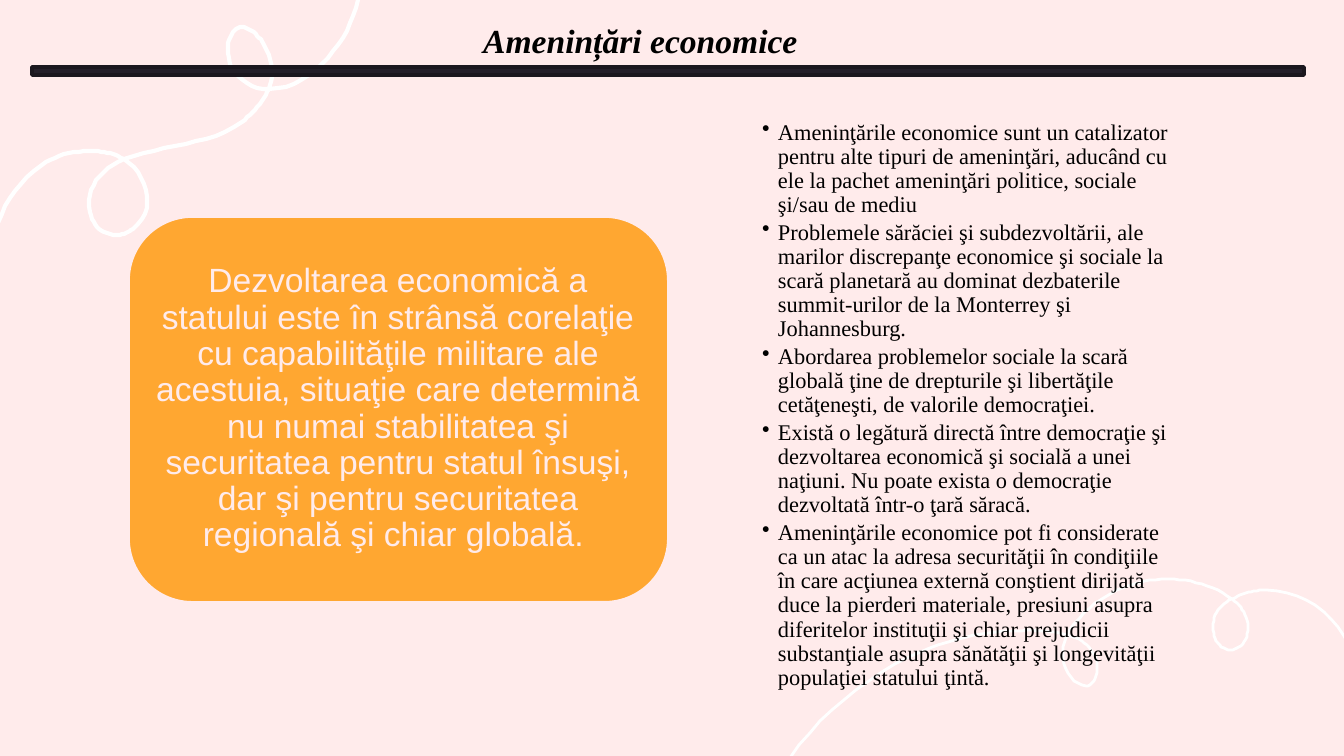
from dataclasses import dataclass

from lxml import etree
from pptx import Presentation
from pptx.dml.color import RGBColor
from pptx.enum.shapes import MSO_SHAPE
from pptx.enum.text import MSO_ANCHOR, PP_ALIGN
from pptx.oxml.ns import qn
from pptx.util import Pt

EMU_PER_PX = 914400 / 134.4
CURVE_STEPS = 12
BLANK_LAYOUT = 6
RECTANGLE, ROUNDED = MSO_SHAPE.RECTANGLE, MSO_SHAPE.ROUNDED_RECTANGLE
TOP, MIDDLE = MSO_ANCHOR.TOP, MSO_ANCHOR.MIDDLE
LEFT, CENTER = PP_ALIGN.LEFT, PP_ALIGN.CENTER


@dataclass(frozen=True)
class Theme:
    background: str = "FFEBEB"
    swirl: str = "FFFFFF"
    bar: str = "241F29"
    bar_edge: str = "1B171E"
    card: str = "FFA731"
    ink: str = "000000"
    serif: str = "Times New Roman"
    sans: str = "Arial"
    large: int = 18
    small: int = 12


THEME = Theme()

TITLE = "Amenințări economice"
STATEMENT = (
    "Dezvoltarea economică a statului este în strânsă corelaţie cu capabilităţile "
    "militare ale acestuia, situaţie care determină nu numai stabilitatea şi "
    "securitatea pentru statul însuşi, dar şi pentru securitatea regională şi "
    "chiar globală. "
)
THREATS = [
    "Ameninţările economice sunt un catalizator pentru alte tipuri de ameninţări, "
    "aducând cu ele la pachet ameninţări politice, sociale şi/sau de mediu",
    "Problemele sărăciei şi subdezvoltării, ale marilor discrepanţe economice şi "
    "sociale la scară planetară au dominat dezbaterile summit-urilor de la "
    "Monterrey şi Johannesburg.",
    "Abordarea problemelor sociale la scară globală ţine de drepturile şi "
    "libertăţile cetăţeneşti, de valorile democraţiei.",
    "Există o legătură directă între democraţie şi dezvoltarea economică şi socială "
    "a unei naţiuni. Nu poate exista o democraţie dezvoltată într-o ţară săracă.",
    "Ameninţările economice pot fi considerate ca un atac la adresa securităţii în "
    "condiţiile în care acţiunea externă conştient dirijată duce la pierderi "
    "materiale, presiuni asupra diferitelor instituţii şi chiar prejudicii "
    "substanţiale asupra sănătăţii şi longevităţii populaţiei statului ţintă.",
]

# Each swirl: a start point, then cubic segments (two controls and an end), in px.
TOP_SWIRL = (353, -66), [
    (364, -34, 362, 1, 347, 31), (332, 58, 304, 89, 269, 89),
    (245, 89, 226, 71, 228, 47), (228, 39, 234, 27, 242, 27),
    (249, 27, 259, 36, 263, 43), (273, 59, 274, 75, 269, 89),
    (263, 102, 253, 113, 242, 122), (212, 145, 161, 145, 124, 159),
    (101, 169, 85, 188, 90, 212), (93, 226, 103, 235, 116, 235),
    (124, 235, 132, 231, 138, 224), (157, 206, 145, 172, 124, 159),
    (113, 153, 101, 151, 89, 151), (69, 151, 48, 157, 34, 171),
    (4, 194, -7, 231, -13, 269),
]
BOTTOM_SWIRL = (781, 771), [
    (815, 717, 867, 675, 923, 651), (952, 639, 981, 632, 1012, 631),
    (1032, 630, 1052, 630, 1067, 635), (1079, 638, 1092, 645, 1096, 659),
    (1099, 668, 1096, 686, 1086, 686), (1068, 685, 1056, 658, 1067, 635),
    (1075, 620, 1089, 607, 1102, 599), (1122, 586, 1144, 579, 1168, 579),
    (1191, 579, 1214, 586, 1232, 599), (1242, 606, 1248, 617, 1248, 628),
    (1248, 641, 1240, 650, 1231, 650), (1220, 650, 1213, 639, 1213, 627),
    (1213, 614, 1221, 604, 1232, 599), (1243, 593, 1254, 590, 1266, 590),
    (1309, 590, 1346, 622, 1357, 666),
]


def px(length):
    return round(length * EMU_PER_PX)


def rgb(color):
    return RGBColor.from_string(color)


def curve_points(start, segments):
    """Yield points along a chain of cubic Bézier segments."""
    x0, y0 = start
    for x1, y1, x2, y2, x3, y3 in segments:
        for step in range(1, CURVE_STEPS + 1):
            t = step / CURVE_STEPS
            u = 1 - t
            weights = u**3, 3 * u * u * t, 3 * u * t * t, t**3
            yield tuple(
                sum(w * value for w, value in zip(weights, axis))
                for axis in ((x0, x1, x2, x3), (y0, y1, y2, y3))
            )
        x0, y0 = x3, y3


def set_line(shape, color, width):
    shape.line.color.rgb = rgb(color)
    shape.line.width = Pt(width)
    shape.shadow.inherit = False


def add_swirl(slide, swirl, width):
    start, segments = swirl
    builder = slide.shapes.build_freeform(*start, scale=EMU_PER_PX)
    builder.add_line_segments(curve_points(start, segments), close=False)
    curve = builder.convert_to_shape()
    curve.fill.background()
    set_line(curve, THEME.swirl, width)


def add_panel(slide, kind, box, fill, edge):
    panel = slide.shapes.add_shape(kind, *map(px, box))
    panel.fill.solid()
    panel.fill.fore_color.rgb = rgb(fill)
    set_line(panel, edge, 2)


def add_bullet(paragraph, indent):
    properties = paragraph._p.get_or_add_pPr()
    properties.set("marL", str(px(indent)))
    properties.set("indent", str(-px(indent)))
    color = etree.SubElement(properties, qn("a:buClr"))
    etree.SubElement(color, qn("a:srgbClr"), val=THEME.ink)
    etree.SubElement(properties, qn("a:buChar"), char="•")


def add_text(slide, box, texts, font, size, color, *, align=LEFT, anchor=TOP,
             inset=None, spacing=1.0, after=0, bullets=False, accent=False):
    frame = slide.shapes.add_textbox(*map(px, box)).text_frame
    frame.word_wrap = True
    frame.vertical_anchor = anchor
    if inset is not None:
        frame.margin_left = frame.margin_right = px(inset)
        frame.margin_top = frame.margin_bottom = px(inset)
    for index, text in enumerate(texts):
        paragraph = frame.add_paragraph() if index else frame.paragraphs[0]
        paragraph.text = text
        if bullets:
            paragraph.level = 1
            add_bullet(paragraph, 16)
        paragraph.alignment = align
        paragraph.line_spacing = spacing
        paragraph.space_after = Pt(after)
        paragraph.font.name = font
        paragraph.font.size = Pt(size)
        paragraph.font.color.rgb = rgb(color)
        paragraph.font.bold = paragraph.font.italic = accent


def main():
    deck = Presentation()
    deck.slide_width, deck.slide_height = px(1344), px(756)
    slide = deck.slides.add_slide(deck.slide_layouts[BLANK_LAYOUT])
    slide.background.fill.solid()
    slide.background.fill.fore_color.rgb = rgb(THEME.background)

    add_swirl(slide, TOP_SWIRL, 2.2)
    add_swirl(slide, BOTTOM_SWIRL, 1.5)
    add_panel(slide, RECTANGLE, (32, 67, 1272, 8), THEME.bar, THEME.bar_edge)
    add_text(slide, (470, 13, 571, 54), [TITLE], THEME.serif, THEME.large,
             THEME.ink, accent=True)
    add_panel(slide, ROUNDED, (128, 216, 541, 387), THEME.card, THEME.background)
    add_text(slide, (146, 235, 504, 348), [STATEMENT], THEME.sans, THEME.large,
             THEME.background, align=CENTER, anchor=MIDDLE, inset=9, spacing=0.9)
    add_text(slide, (755, 280, 426, 251), THREATS, THEME.serif, THEME.small,
             THEME.ink, anchor=MIDDLE, inset=7, spacing=0.9, after=1.8, bullets=True)
    deck.save("out.pptx")


if __name__ == "__main__":
    main()
